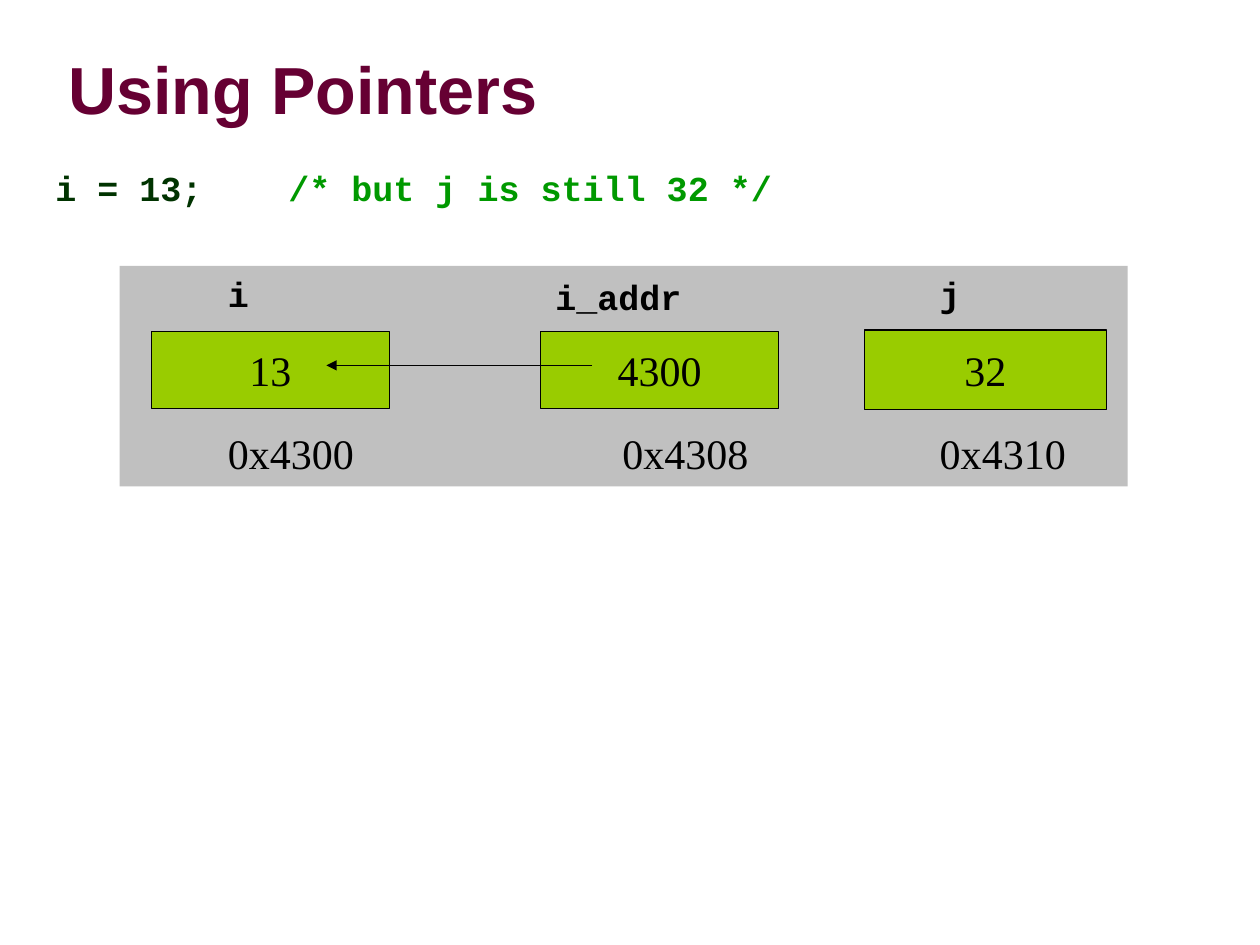
import pptx
import pptx.util
import pptx.dml.color
import pptx.enum.shapes
import pptx.enum.text
import pptx.oxml.ns
import lxml.etree

Inches = pptx.util.Inches
Pt = pptx.util.Pt
qn = pptx.oxml.ns.qn
ANCHOR = pptx.enum.text.MSO_ANCHOR
ALIGN = pptx.enum.text.PP_ALIGN
RECTANGLE = pptx.enum.shapes.MSO_SHAPE.RECTANGLE

COLORS = {
    "title": "660033",
    "code": "003300",
    "comment": "009900",
    "memory": "C0C0C0",
    "cell": "99CC00",
    "ink": "000000",
}

# Name, value, address; then lefts of name and address, and the cell's
# left, top, width, height, all measured from the memory panel's corner.
VARIABLES = [
    ("i", "13", "0x4300", 0.76, 0.76, (0.25, 0.52, 1.89, 0.61)),
    ("i_addr", "4300", "0x4308", 3.36, 3.89, (3.34, 0.52, 1.89, 0.61)),
    ("j", "32", "0x4310", 6.41, 6.41, (5.91, 0.51, 1.92, 0.63)),
]
NAME_TOPS = {"i": 0, "i_addr": 0.03, "j": 0}
ADDRESS_TOP = 1.23


def rgb(name):
    return pptx.dml.color.RGBColor.from_string(COLORS[name])


def set_font(font, face, size, color, bold=False):
    font.name = face
    font.size = Pt(size)
    font.bold = bold
    font.color.rgb = rgb(color)


def add_title(page, left, top, width, height):
    title = page.shapes.title
    title.left, title.top = Inches(left), Inches(top)
    title.width, title.height = Inches(width), Inches(height)
    frame = title.text_frame
    frame.text = "Using Pointers"
    frame.auto_size = pptx.enum.text.MSO_AUTO_SIZE.NONE
    frame.vertical_anchor = ANCHOR.MIDDLE
    para = frame.paragraphs[0]
    para.alignment = ALIGN.LEFT
    set_font(para.font, "Arial", 38, "title", bold=True)


def add_code(page, left, top, width, height):
    """Add the statement and, after two tabs, its comment."""
    box = page.shapes.add_textbox(
        Inches(left), Inches(top), Inches(width), Inches(height))
    box.text_frame.word_wrap = True
    para = box.text_frame.paragraphs[0]
    para.line_spacing = 0.8
    para.space_before = Pt(5)
    properties = para._p.get_or_add_pPr()
    properties.set("marL", str(Inches(0.37)))
    properties.set("indent", str(Inches(-0.35)))
    tabs = lxml.etree.SubElement(properties, qn("a:tabLst"))
    for stop in [0.37] + [0.97 + step for step in range(7)]:
        lxml.etree.SubElement(
            tabs, qn("a:tab"), pos=str(Inches(stop)), algn="l")
    for text, color in (("i = 13;\t\t", "code"),
                        ("/* but j is still 32 */", "comment")):
        span = para.add_run()
        span.text = text
        set_font(span.font, "Courier New", 20, color, bold=True)


def add_label(page, text, left, top, width, height, face, size, bold=False):
    box = page.shapes.add_textbox(
        Inches(left), Inches(top), Inches(width), Inches(height))
    box.text_frame.word_wrap = False
    para = box.text_frame.paragraphs[0]
    para.text = text
    para.alignment = ALIGN.LEFT
    set_font(para.font, face, size, "ink", bold)


def add_rectangle(page, left, top, width, height, fill):
    shape = page.shapes.add_shape(
        RECTANGLE, Inches(left), Inches(top), Inches(width), Inches(height))
    shape.shadow.inherit = False
    shape.fill.solid()
    shape.fill.fore_color.rgb = rgb(fill)
    shape.line.fill.background()
    return shape


def add_cell(page, value, left, top, width, height):
    cell = add_rectangle(page, left, top, width, height, "cell")
    cell.line.color.rgb = rgb("ink")
    cell.line.width = Pt(0.75)
    frame = cell.text_frame
    frame.word_wrap = False
    frame.vertical_anchor = ANCHOR.MIDDLE
    para = frame.paragraphs[0]
    para.text = value
    para.alignment = ALIGN.CENTER
    set_font(para.font, "Times New Roman", 24, "ink")


def add_pointer(page, start, end, y):
    arrow = page.shapes.add_connector(
        pptx.enum.shapes.MSO_CONNECTOR.STRAIGHT,
        Inches(start), Inches(y), Inches(end), Inches(y))
    arrow.line.color.rgb = rgb("ink")
    arrow.line.width = Pt(0.75)
    lxml.etree.SubElement(
        arrow.line._get_or_add_ln(), qn("a:tailEnd"), type="triangle")
    lxml.etree.SubElement(arrow._element.spPr, qn("a:effectLst"))


def add_memory(page, left, top, width, height):
    """Add the memory panel with its variables and the pointer arrow."""
    add_rectangle(page, left, top, width, height, "memory")
    for name, value, address, name_left, address_left, cell in VARIABLES:
        cell_left, cell_top, cell_width, cell_height = cell
        add_cell(page, value, left + cell_left, top + cell_top,
                 cell_width, cell_height)
        name_width = 0.2 + len(name) / 6
        add_label(page, name, left + name_left, top + NAME_TOPS[name],
                  name_width, 0.44, "Courier New", 20, bold=True)
        add_label(page, address, left + address_left, top + ADDRESS_TOP,
                  1.21, 0.51, "Times New Roman", 24)
    add_pointer(page, left + 3.75, left + 1.64, top + 0.79)


def main():
    deck = pptx.Presentation()
    deck.slide_width, deck.slide_height = Inches(10), Inches(7.5)
    page = deck.slides.add_slide(deck.slide_layouts.get_by_name("Title Only"))
    add_title(page, 0.44, 0.33, 9.53, 0.74)
    add_memory(page, 0.95, 2.11, 8, 1.75)
    add_code(page, 0.32, 1.34, 9.09, 5.72)
    deck.save("out.pptx")


if __name__ == "__main__":
    main()
